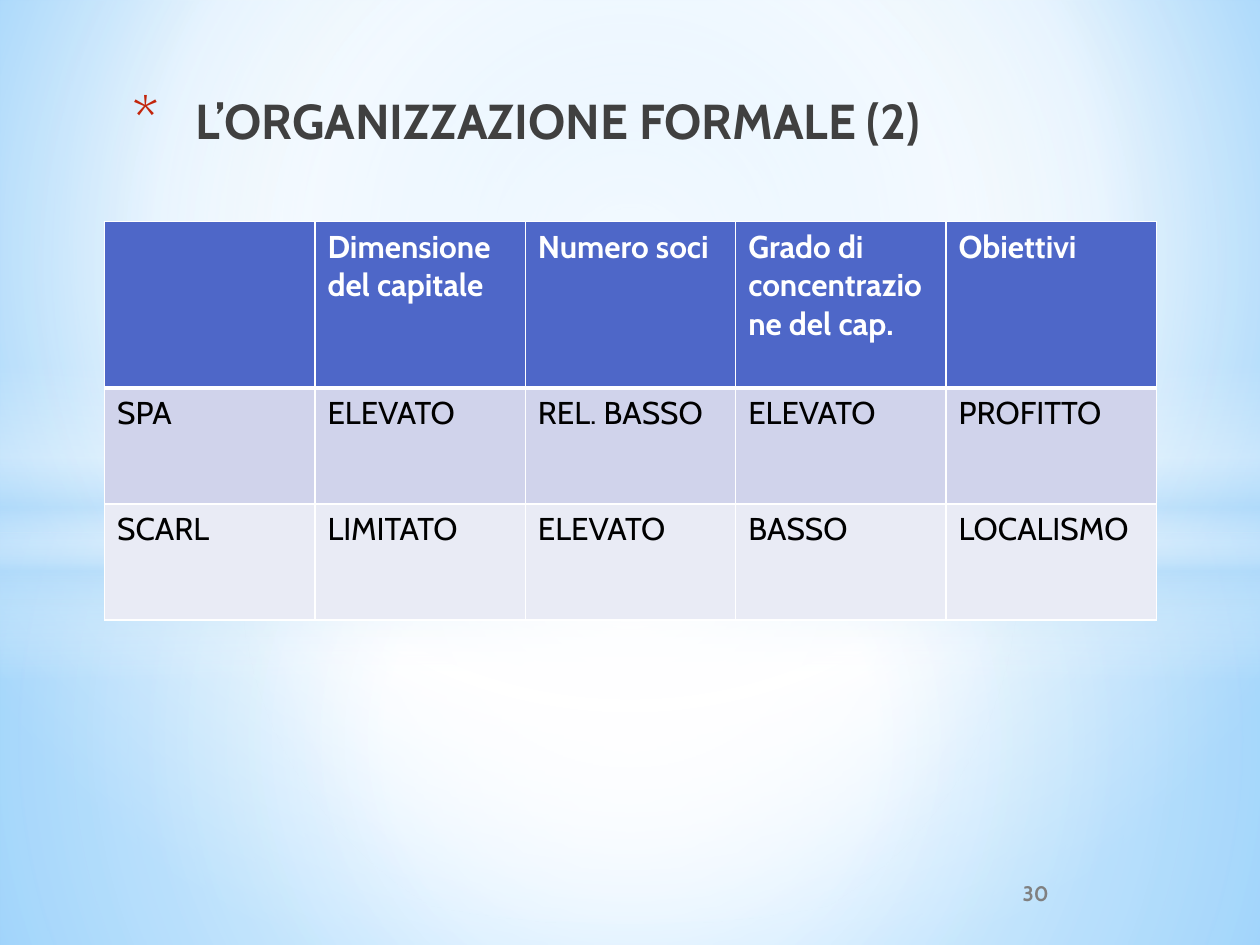
from dataclasses import dataclass

from lxml import etree
from pptx import Presentation
from pptx import util as u
from pptx.dml import color
from pptx.enum import shapes, text
from pptx.oxml import ns


@dataclass(frozen=True)
class Theme:
    font: str = "Cabin"
    title: str = "404040"
    bullet: str = "C3260C"
    number: str = "808080"
    header: str = "4E67C8"
    bands: tuple = ("D0D3EB", "E9EBF5")
    white: str = "FFFFFF"
    black: str = "000000"
    haze: str = "B4DCFA"
    sky: tuple = ("9ED5FF", "5BB9FF")
    title_size: int = 28
    table_size: int = 18
    number_size: int = 12


def child(parent, tag, **attributes):
    return etree.SubElement(parent, ns.qn(tag), {k: str(v) for k, v in attributes.items()})


def gradient(stops, focus=None, angle=0):
    fill = etree.Element(ns.qn("a:gradFill"), rotWithShape="1")
    stop_list = child(fill, "a:gsLst")
    for position, rgb, alpha in stops:
        stop = child(stop_list, "a:gs", pos=position * 1000)
        tint = child(stop, "a:srgbClr", val=rgb)
        if alpha < 100:
            child(tint, "a:alpha", val=alpha * 1000)
    if focus:
        path = child(fill, "a:path", path="circle")
        child(path, "a:fillToRect", **{side: value * 1000 for side, value in zip("ltrb", focus)})
    else:
        child(fill, "a:lin", ang=angle * 60000, scaled=0)
    return fill


class SlideBuilder:
    def __init__(self, slide, theme):
        self.slide = slide
        self.theme = theme

    def style(self, paragraph, size, rgb, bold):
        for run in paragraph.runs:
            run.font.name = self.theme.font
            run.font.size = u.Pt(size)
            run.font.bold = bold
            run.font.color.rgb = color.RGBColor.from_string(rgb)

    def backdrop(self, stops, focus):
        self.slide.background.fill.solid()
        properties = self.slide.element.find(".//" + ns.qn("p:bgPr"))
        properties.replace(properties[0], gradient(stops, focus))

    def glow(self, kind, box, stops, focus=None, angle=0):
        glow = self.slide.shapes.add_shape(kind, *map(u.Inches, box))
        glow.shadow.inherit = False
        glow.line.fill.background()
        glow.fill.background()
        properties = glow.element.spPr
        properties.replace(properties.find(ns.qn("a:noFill")), gradient(stops, focus, angle))

    def label(self, box, words, size, rgb, anchor, align):
        frame = self.slide.shapes.add_textbox(*map(u.Inches, box)).text_frame
        frame.word_wrap = True
        frame.vertical_anchor = anchor
        frame.text = words
        paragraph = frame.paragraphs[0]
        paragraph.alignment = align
        self.style(paragraph, size, rgb, True)
        return paragraph

    def title(self, box, words):
        heading = self.label(box, words, self.theme.title_size, self.theme.title,
                             text.MSO_ANCHOR.TOP, text.PP_ALIGN.LEFT)
        properties = heading._p.get_or_add_pPr()
        properties.set("marL", str(u.Inches(0.7)))
        properties.set("indent", str(u.Inches(-0.5)))
        child(child(properties, "a:buClr"), "a:srgbClr", val=self.theme.bullet)
        child(properties, "a:buSzPct", val=128000)
        child(properties, "a:buFont", typeface=self.theme.font)
        child(properties, "a:buChar", char="*")

    def borders(self, cell, top, bottom):
        properties = cell._tc.get_or_add_tcPr()
        for side, width in zip("LRTB", (1, 1, top, bottom)):
            line = child(properties, "a:ln" + side, w=u.Pt(width))
            child(child(line, "a:solidFill"), "a:srgbClr", val=self.theme.white)

    def table(self, box, rows, heights):
        table = self.slide.shapes.add_table(len(rows), len(rows[0]), *map(u.Inches, box)).table
        table.first_row = table.horz_banding = False
        for r, (row, height) in enumerate(zip(rows, heights)):
            table.rows[r].height = u.Inches(height)
            header = r == 0
            fill = self.theme.header if header else self.theme.bands[(r - 1) % 2]
            ink = self.theme.white if header else self.theme.black
            for c, words in enumerate(row):
                cell = table.cell(r, c)
                self.borders(cell, 3 if r == 1 else 1, 3 if header else 1)
                cell.fill.solid()
                cell.fill.fore_color.rgb = color.RGBColor.from_string(fill)
                if words:
                    cell.text_frame.text = words
                    self.style(cell.text_frame.paragraphs[0], self.theme.table_size, ink, header)


def main():
    deck = Presentation()
    deck.slide_width, deck.slide_height = u.Inches(10), u.Inches(7.5)
    theme = Theme()
    page = SlideBuilder(deck.slides.add_slide(deck.slide_layouts[6]), theme)
    white, haze = theme.white, theme.haze
    rectangle, ellipse = shapes.MSO_SHAPE.RECTANGLE, shapes.MSO_SHAPE.OVAL
    centre = (50, 50, 50, 50)

    page.backdrop([(0, theme.sky[0], 100), (60, white, 100), (100, theme.sky[1], 100)],
                  (20, 10, 20, 60))
    page.glow(rectangle, (0, 4.23, 10, 3.27),
              [(0, white, 91), (37, white, 76), (100, haze, 79)], centre)
    page.glow(rectangle, (0, 0, 10, 4.23),
              [(0, white, 89), (48, white, 62), (100, haze, 79)], centre)
    page.glow(rectangle, (0, 2.9, 10, 2.5),
              [(0, white, 0), (29, white, 30), (45, haze, 40),
               (55, white, 26), (65, haze, 60), (100, white, 0)], angle=90)
    page.glow(ellipse, (0, 1.75, 10, 5.58), [(0, white, 100), (54, white, 0)], centre)

    page.label((7.22, 6.81, 2, 0.56), "30", theme.number_size, theme.number,
               text.MSO_ANCHOR.MIDDLE, text.PP_ALIGN.CENTER)
    page.title((0.75, 0.67, 8.5, 1.33), "L’ORGANIZZAZIONE FORMALE (2)")
    page.table((0.83, 1.76, 8.35, 3.16), [
        ("", "Dimensione del capitale", "Numero soci",
         "Grado di concentrazione del cap.", "Obiettivi"),
        ("SPA", "ELEVATO", "REL. BASSO", "ELEVATO", "PROFITTO"),
        ("SCARL", "LIMITATO", "ELEVATO", "BASSO", "LOCALISMO"),
    ], (1.32, 0.92, 0.92))
    deck.save("out.pptx")


if __name__ == "__main__":
    main()
